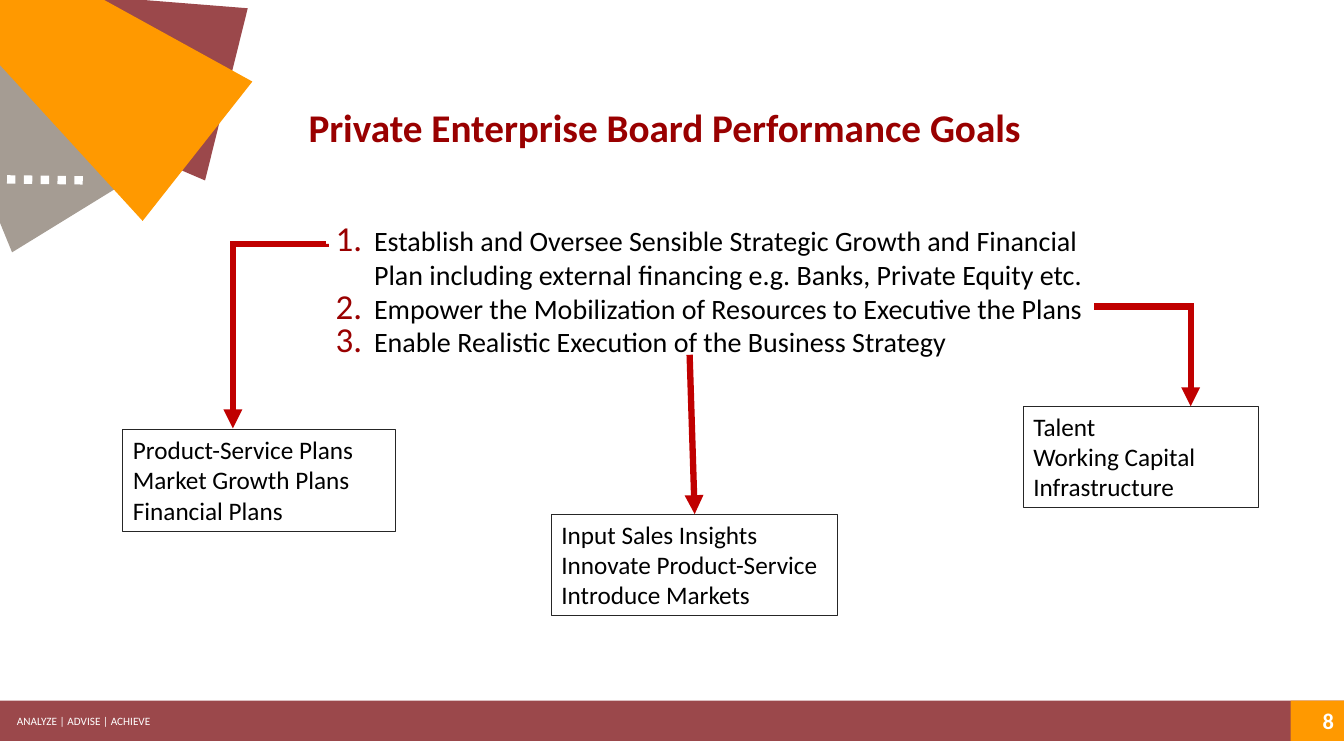
from dataclasses import dataclass

from lxml.etree import SubElement
from pptx import Presentation
from pptx.dml.color import RGBColor
from pptx.enum.dml import MSO_LINE
from pptx.enum.shapes import MSO_CONNECTOR, MSO_SHAPE
from pptx.enum.text import MSO_ANCHOR, MSO_AUTO_SIZE, PP_ALIGN
from pptx.oxml.ns import qn
from pptx.util import Pt

# Content
TITLE = "Private Enterprise Board Performance Goals"
GOALS = [
    "Establish and Oversee Sensible Strategic Growth and Financial Plan "
    "including external financing e.g. Banks, Private Equity etc.",
    "Empower the Mobilization of Resources to Executive the Plans",
    "Enable Realistic Execution of the Business Strategy",
]
MOTTO = "ANALYZE | ADVISE | ACHIEVE"
PAGE = "8"
CARDS = {
    "plans": ((122, 426, 270, 101),
              ["Product-Service Plans", "Market Growth Plans", "Financial Plans"]),
    "means": ((1015, 403, 233, 101),
              ["Talent", "Working Capital", "Infrastructure"]),
    "sales": ((547, 510, 284, 101),
              ["Input Sales Insights", "Innovate Product-Service Introduce Markets"]),
}
# Start, end and bend (in 1/100000 of the drop)
BENDS = [((323, 242), (231, 425), 200), ((1088, 301), (1181, 403), 3200)]


@dataclass(frozen=True)
class Theme:
    font: str = "Calibri"
    wine: str = "9B484B"
    stone: str = "A59C93"
    amber: str = "FF9900"
    head: str = "990000"
    arrow: str = "C00000"
    edge: str = "262626"
    white: str = "FFFFFF"
    black: str = "000000"
    big: int = 28
    body: int = 20
    card: int = 18
    page: int = 16
    tiny: int = 8


T = Theme()
SCALE = 9144  # EMU per px, 100 px to the inch


def px(*nums):
    return [round(n * SCALE) for n in nums]


def rgb(code):
    return RGBColor.from_string(code)


deck = Presentation()
deck.slide_width, deck.slide_height = px(1333, 750)
slide = deck.slides.add_slide(deck.slide_layouts[1])
shapes = slide.shapes


def number(para):
    """Give a paragraph a hanging coloured number."""
    props = para._p.get_or_add_pPr()
    indent, = px(38)
    props.set("marL", str(indent))
    props.set("indent", str(-indent))
    tint = SubElement(props, qn("a:buClr"))
    SubElement(tint, qn("a:srgbClr"), val=T.head)
    SubElement(props, qn("a:buSzPct"), val="125000")
    SubElement(props, qn("a:buFont"), typeface=T.font)
    SubElement(props, qn("a:buAutoNum"), type="arabicPeriod")


def write(shape, lines, size, color=T.black, bold=False, wrap=True,
          align=PP_ALIGN.LEFT, anchor=MSO_ANCHOR.TOP, numbered=False):
    frame = shape.text_frame
    frame.word_wrap = wrap
    frame.auto_size = MSO_AUTO_SIZE.NONE
    frame.vertical_anchor = anchor
    for i, line in enumerate(lines):
        para = frame.add_paragraph() if i else frame.paragraphs[0]
        if numbered:
            number(para)
        para.alignment = align
        para.space_before = Pt(0)
        run = para.add_run()
        run.text = line
        font = run.font
        font.name, font.size, font.bold = T.font, Pt(size), bold
        font.color.rgb = rgb(color)


def block(kind, box, fill, edge=None, turn=0):
    shape = shapes.add_shape(kind, *px(*box))
    shape.shadow.inherit = False
    shape.rotation = turn
    shape.fill.solid()
    shape.fill.fore_color.rgb = rgb(fill)
    if edge:
        shape.line.color.rgb = rgb(edge)
        shape.line.width = Pt(0.75)
    else:
        shape.line.fill.background()
    return shape


def link(kind, start, end, color, width, arrow=True):
    wire = shapes.add_connector(kind, *px(*start, *end))
    wire.line.color.rgb = rgb(color)
    wire.line.width = Pt(width)
    if arrow:
        stroke = wire.line._get_or_add_ln()
        SubElement(stroke, qn("a:miter"), lim="800000")
        SubElement(stroke, qn("a:tailEnd"), type="triangle")
    SubElement(wire.element.spPr, qn("a:effectLst"))
    return wire


def elbow(start, end, bend):
    """Run sideways, then down: a quarter-turned elbow on the same centre."""
    (x1, y1), (x2, y2) = start, end
    mx, my = (x1 + x2) / 2, (y1 + y2) / 2
    half, rise = (y2 - y1) / 2, abs(x2 - x1) / 2
    left, right = mx - half, mx + half
    ends = (left, right) if x2 < x1 else (right, left)
    wire = link(MSO_CONNECTOR.ELBOW, (ends[0], my - rise),
                (ends[1], my + rise), T.arrow, 4.5)
    props = wire.element.spPr
    turn = 90 if x2 < x1 else 270
    props.find(qn("a:xfrm")).set("rot", str(turn * 60000))
    guides = props.find(qn("a:prstGeom")).find(qn("a:avLst"))
    SubElement(guides, qn("a:gd"), name="adj1", fmla=f"val {bend}")


# Footer bar and plain corner shapes
block(MSO_SHAPE.RECTANGLE, (0, 695, 1333, 40), T.wine)
for x, y, turn, fill in [(7, -72, 283.9, T.wine), (-71, -43, 328.4, T.stone),
                         (3, -66, 308.2, T.amber)]:
    block(MSO_SHAPE.TRAPEZOID, (x, y, 176, 267), fill, turn=turn)
dots = link(MSO_CONNECTOR.STRAIGHT, (7, 178), (89, 179), T.white, 6, arrow=False)
dots.line.dash_style = MSO_LINE.ROUND_DOT
write(shapes.add_textbox(*px(7, 704, 259, 24)), [MOTTO], T.tiny, T.white)
write(block(MSO_SHAPE.RECTANGLE, (1280, 695, 53, 40), T.amber), [PAGE], T.page,
      T.white, bold=True, align=PP_ALIGN.RIGHT, anchor=MSO_ANCHOR.MIDDLE)

# Title and goals
title, goals = shapes.title, slide.placeholders[1]
for holder, box in [(title, (296, 97, 735, 57)), (goals, (323, 217, 778, 145))]:
    holder.left, holder.top, holder.width, holder.height = px(*box)
write(title, [TITLE], T.big, T.head, bold=True, wrap=False)
write(goals, GOALS, T.body, numbered=True)

# Cards and arrows
cards = {}
for name, (box, lines) in CARDS.items():
    cards[name] = block(MSO_SHAPE.RECTANGLE, box, T.white, T.edge)
    write(cards[name], lines, T.card)
for bend in BENDS:
    elbow(*bend)
drop = link(MSO_CONNECTOR.STRAIGHT, (684, 352), (689, 510), T.arrow, 4.5)
drop.end_connect(cards["sales"], 0)

deck.save("out.pptx")
